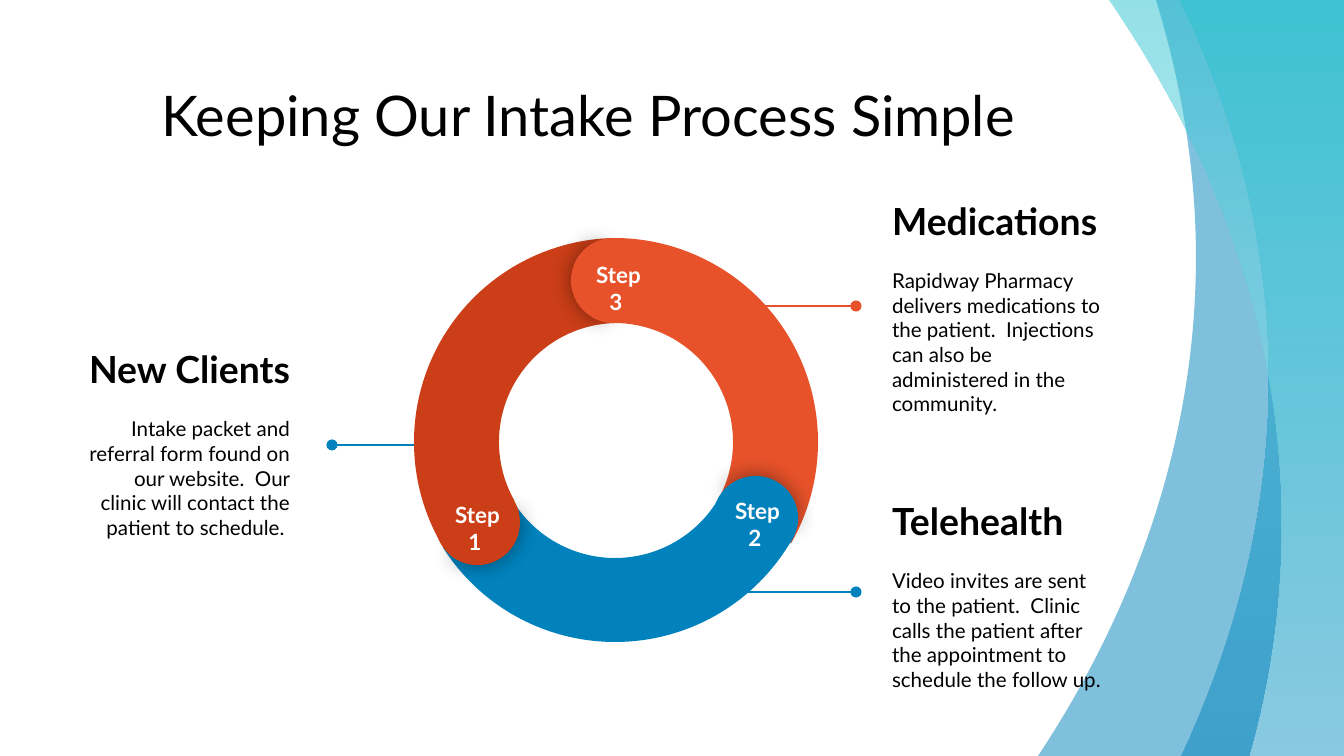
from dataclasses import dataclass

from lxml.etree import SubElement as Sub
from pptx import Presentation
from pptx.dml.color import RGBColor
from pptx.enum.shapes import MSO_CONNECTOR as Conn, MSO_SHAPE as Kind
from pptx.enum.text import MSO_ANCHOR as Anchor, MSO_AUTO_SIZE as Fit, PP_ALIGN as Align
from pptx.oxml.ns import qn
from pptx.util import Emu, Pt

WIDE, HIGH = 1344, 756
SCALE = 9144000 / WIDE
FONT = "Lato"
BLUE, TEAL, PALE = "0182BC", "2AC3D1", "D4F3F6"
CORAL, RUST = "E7522A", "CB3E17"
BLACK, WHITE = "000000", "FFFFFF"
RING, CAP = 408, 85


@dataclass
class Wave:
    start: tuple    # point on the edge
    rise: tuple     # two controls up to the head
    head: int       # x where the edge meets the slide top
    foot: int       # x where the edge meets the slide bottom
    back: tuple     # two controls from the foot to the start
    tints: tuple
    angle: int = 0


@dataclass
class Step:
    label: str
    tint: str
    ring: tuple     # left, top
    turn: int
    stop: float
    thick: int
    cap: tuple
    tilt: int
    text: tuple


@dataclass
class Note:
    head: str
    body: str
    box: tuple
    align: Align
    line: tuple     # start x, end x, y
    tint: str


WAVES = [
    Wave((1196, 257), ((1196, 168), (1181, 82)), 1156, 1038,
         ((1138, 605), (1196, 435)), (BLUE,)),
    Wave((1269, 379), ((1269, 247), (1238, 120)), 1180, 1181,
         ((1236, 640), (1269, 512)), (BLUE, TEAL), 90),
    Wave((1282, 525), ((1282, 337), (1220, 160)), 1109, 1250,
         ((1271, 683), (1282, 605)), (TEAL, PALE), 270),
]
STEPS = [
    Step("Step\v3 ", CORAL, (410, 238), 60, 197.82, 85, (571, 238), 0, (581, 248)),
    Step("Step\v2 ", BLUE, (411, 234), 180, 196.63, 84, (713, 476), 120, (720, 484)),
    Step("Step\v1 ", RUST, (414, 238), 300, 197.03, 85, (435, 480), 240, (440, 488)),
]
NOTES = [
    Note("New Clients", "Intake packet and referral form found on our website.  "
         "Our clinic will contact the patient to schedule. ",
         (72, 348, 231, 190), Align.RIGHT, (426, 332, 445), BLUE),
    Note("Medications", "Rapidway Pharmacy delivers medications to the patient.  "
         "Injections can also be administered in the community.",
         (879, 212, 241, 190), Align.LEFT, (710, 856, 306), CORAL),
    Note("Telehealth", "Video invites are sent to the patient.  Clinic calls the "
         "patient after the appointment to schedule the follow up.",
         (879, 500, 241, 190), Align.LEFT, (710, 856, 592), BLUE),
]


def px(n: float) -> Emu:
    return Emu(round(n * SCALE))


def rgb(code: str) -> RGBColor:
    return RGBColor.from_string(code)


def style(para, size: int, tint: str, bold: bool, align: Align) -> None:
    para.alignment = align
    for run in para.runs:
        font = run.font
        font.name, font.size, font.bold = FONT, Pt(size), bold
        font.color.rgb = rgb(tint)


def bend(shape, node, pair: tuple) -> None:
    """Turn a straight segment into a cubic curve with two controls."""
    node.tag = qn("a:cubicBezTo")
    for i, (x, y) in enumerate(pair):
        spot = Sub(node, qn("a:pt"), x=str(px(x) - shape.left), y=str(px(y) - shape.top))
        node.insert(i, spot)


def draw_wave(slide, wave: Wave) -> None:
    points = [(wave.head, 0), (WIDE, 0), (WIDE, HIGH), (wave.foot, HIGH), wave.start]
    pen = slide.shapes.build_freeform(*map(px, wave.start), scale=1.0)
    pen.add_line_segments([(px(x), px(y)) for x, y in points])
    shape = pen.convert_to_shape()
    props = shape._element.spPr
    lines = list(props.iter(qn("a:lnTo")))
    bend(shape, lines[0], wave.rise)
    bend(shape, lines[-1], wave.back)
    shape.shadow.inherit = False
    shape.line.fill.background()
    fill = shape.fill
    if len(wave.tints) == 1:
        fill.solid()
        fill.fore_color.rgb = rgb(wave.tints[0])
    else:
        fill.gradient()
        fill.gradient_angle = wave.angle
        for stop, tint in zip(fill.gradient_stops, wave.tints):
            stop.color.rgb = rgb(tint)
    for node in list(props.iter(qn("a:srgbClr"))):
        Sub(node, qn("a:alpha"), val="50000")


def draw_part(slide, kind: Kind, spot: tuple, size: int, turn: int,
              tint: str, adjs: tuple, glow: bool = False) -> None:
    shape = slide.shapes.add_shape(kind, *map(px, (*spot, size, size)))
    shape.rotation = turn
    for i, val in enumerate(adjs):
        shape.adjustments[i] = val
    shape.fill.solid()
    shape.fill.fore_color.rgb = rgb(tint)
    shape.line.fill.background()
    shape.shadow.inherit = False
    if glow:
        effect = shape._element.spPr.find(qn("a:effectLst"))
        shade = Sub(effect, qn("a:outerShdw"), blurRad=str(Pt(11.2)),
                    dist="0", dir="0", algn="ctr", rotWithShape="0")
        Sub(Sub(shade, qn("a:srgbClr"), val=BLACK), qn("a:alpha"), val="43000")


def add_text(slide, box: tuple, anchor: Anchor):
    frame = slide.shapes.add_textbox(*map(px, box)).text_frame
    frame.word_wrap = True
    frame.vertical_anchor = anchor
    frame.margin_left = frame.margin_right = px(13)
    frame.margin_top = frame.margin_bottom = px(13)
    return frame


def draw_note(slide, note: Note) -> None:
    frame = add_text(slide, note.box, Anchor.MIDDLE)
    head, body = frame.paragraphs[0], frame.add_paragraph()
    head.text, body.text = note.head, note.body
    style(head, 20, BLACK, True, note.align)
    style(body, 11, BLACK, False, note.align)
    head.space_after = Pt(13.5)
    left, right, y = note.line
    line = slide.shapes.add_connector(Conn.STRAIGHT, px(left), px(y), px(right), px(y))
    line.line.color.rgb = rgb(note.tint)
    line.line.width = Pt(0.75)
    Sub(line.line._get_or_add_ln(), qn("a:tailEnd"), type="oval")
    Sub(line._element.spPr, qn("a:effectLst"))


def draw_cap(slide, step: Step) -> None:
    draw_part(slide, Kind.PIE, step.cap, CAP, step.tilt, step.tint,
              (61.9, 149.96), glow=True)
    # The plain half hides the shadow on the step's own arc
    draw_part(slide, Kind.PIE, step.cap, CAP, (step.tilt + 180) % 360, step.tint,
              (40.28, 171.84))


def draw_label(slide, step: Step) -> None:
    frame = add_text(slide, (*step.text, 75, 39), Anchor.TOP)
    para = frame.paragraphs[0]
    para.text = step.label
    style(para, 12, WHITE, True, Align.CENTER)


def main() -> None:
    deck = Presentation()
    deck.slide_width, deck.slide_height = px(WIDE), px(HIGH)
    slide = deck.slides.add_slide(deck.slide_layouts[5])

    # Title
    title = slide.shapes.title
    title.left, title.top, title.width, title.height = map(px, (161, 39, 887, 109))
    frame = title.text_frame
    frame.text = "Keeping Our Intake Process Simple"
    frame.auto_size, frame.word_wrap = Fit.NONE, True
    frame.vertical_anchor = Anchor.BOTTOM
    frame.margin_left = frame.margin_right = frame.margin_top = frame.margin_bottom = 0
    style(frame.paragraphs[0], 30, BLACK, False, Align.LEFT)

    # Waves on the right, then notes with their lines
    for wave in WAVES:
        draw_wave(slide, wave)
    for note in NOTES:
        draw_note(slide, note)

    # Ring, caps and step labels
    for step in STEPS:
        draw_part(slide, Kind.BLOCK_ARC, step.ring, RING, step.turn, step.tint,
                  (126.23, step.stop, step.thick / RING))
    for step in STEPS:
        draw_cap(slide, step)
    for step in STEPS:
        draw_label(slide, step)
    deck.save("out.pptx")


if __name__ == "__main__":
    main()
